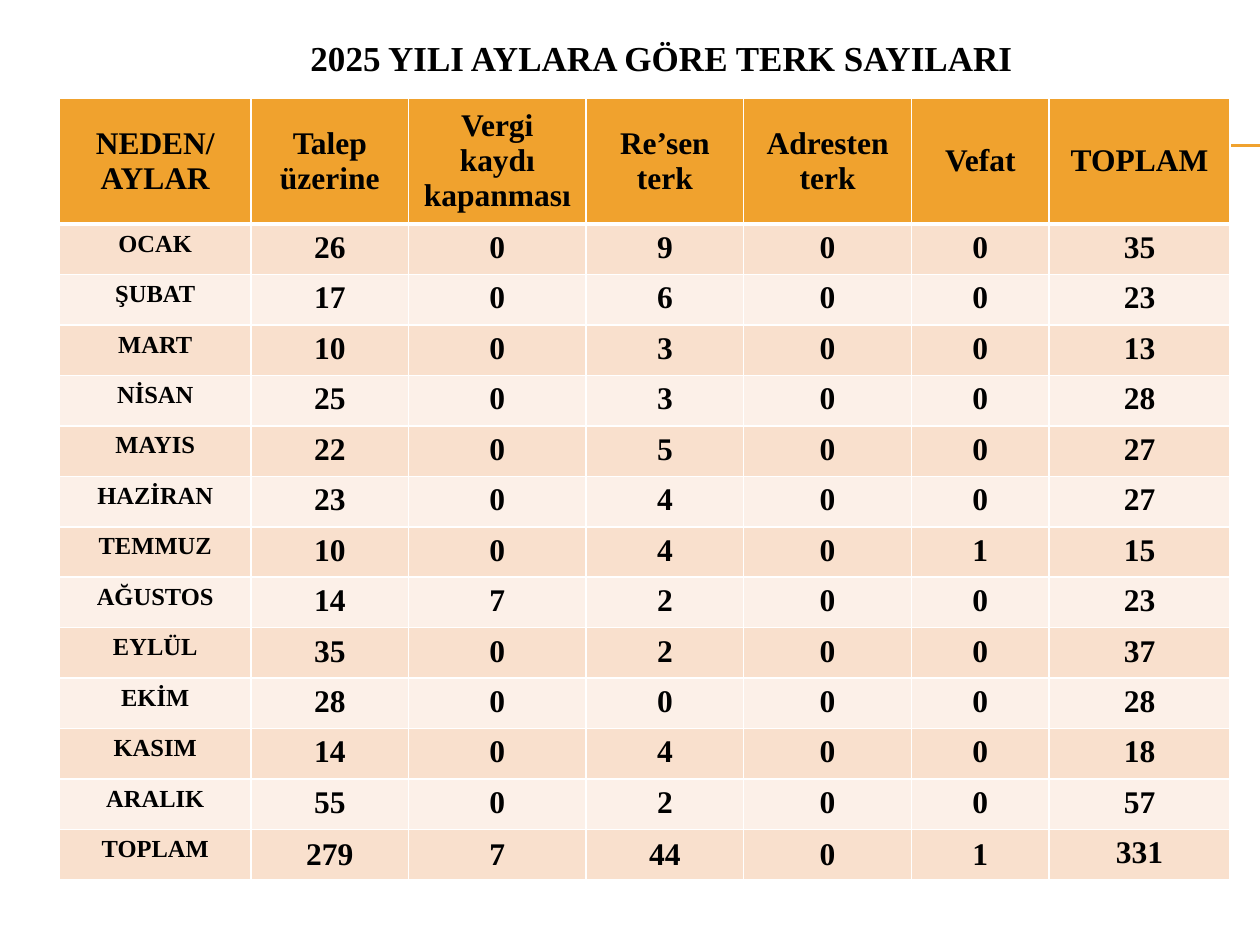
from lxml import etree
from pptx import Presentation
from pptx.dml.color import RGBColor
from pptx.enum import shapes, text
from pptx.oxml import ns
from pptx.util import Pt

ORANGE = RGBColor(0xF0, 0xA2, 0x2E)
PEACH = RGBColor(0xF9, 0xE0, 0xCD)
CREAM = RGBColor(0xFC, 0xF0, 0xE8)
BLACK = RGBColor(0, 0, 0)
WHITE = RGBColor(0xFF, 0xFF, 0xFF)
FONT = "Times New Roman"

TITLE = "2025 YILI AYLARA GÖRE TERK SAYILARI"
HEADER = ["NEDEN/ AYLAR", "Talep üzerine", "Vergi kaydı kapanması", "Re’sen terk",
          "Adresten terk", "Vefat", "TOPLAM"]
MONTHS = [
    ("OCAK", 26, 0, 9, 0, 0, 35),
    ("ŞUBAT", 17, 0, 6, 0, 0, 23),
    ("MART", 10, 0, 3, 0, 0, 13),
    ("NİSAN", 25, 0, 3, 0, 0, 28),
    ("MAYIS", 22, 0, 5, 0, 0, 27),
    ("HAZİRAN", 23, 0, 4, 0, 0, 27),
    ("TEMMUZ", 10, 0, 4, 0, 1, 15),
    ("AĞUSTOS", 14, 7, 2, 0, 0, 23),
    ("EYLÜL", 35, 0, 2, 0, 0, 37),
    ("EKİM", 28, 0, 0, 0, 0, 28),
    ("KASIM", 14, 0, 4, 0, 0, 18),
    ("ARALIK", 55, 0, 2, 0, 0, 57),
]
TOTALS = ("TOPLAM", 279, 7, 44, 0, 1, 331)
COL_WIDTHS = [109.5, 90, 101.5, 90, 96, 78.5, 103.5]
HEADER_HEIGHT, ROW_HEIGHT = 71, 28


def format_text(tf, size):
    for p in tf.paragraphs:
        p.alignment = text.PP_ALIGN.CENTER
        for r in p.runs:
            r.font.name = FONT
            r.font.size = Pt(size)
            r.font.bold = True
            r.font.color.rgb = BLACK


def set_borders(cell, widths):
    """Draw white borders; widths maps L, R, T and B to points."""
    tc_pr = cell._tc.get_or_add_tcPr()
    for i, side in enumerate("LRTB"):
        ln = etree.Element(ns.qn(f"a:ln{side}"), w=str(Pt(widths[side])))
        fill = etree.SubElement(ln, ns.qn("a:solidFill"))
        etree.SubElement(fill, ns.qn("a:srgbClr"), val=str(WHITE))
        tc_pr.insert(i, ln)


def add_rules(s, left, top, width):
    for y in (top, top + 0.7):
        line = s.shapes.add_connector(shapes.MSO_CONNECTOR.STRAIGHT,
                                      Pt(left), Pt(y), Pt(left + width), Pt(y))
        line.line.color.rgb = ORANGE
        line.line.width = Pt(0.75)
        etree.SubElement(line._element.spPr, ns.qn("a:effectLst"))


def add_title(s, left, top, width, height):
    tf = s.shapes.add_textbox(Pt(left), Pt(top), Pt(width), Pt(height)).text_frame
    tf.word_wrap = True
    tf.margin_top = Pt(6)
    tf.text = TITLE
    format_text(tf, 20)


def add_month_table(s, left, top):
    rows = [HEADER, *MONTHS, TOTALS]
    last_row, last_col = len(rows) - 1, len(HEADER) - 1
    height = HEADER_HEIGHT + last_row * ROW_HEIGHT
    table = s.shapes.add_table(len(rows), len(HEADER), Pt(left), Pt(top),
                               Pt(sum(COL_WIDTHS)), Pt(height)).table
    for col, width in zip(table.columns, COL_WIDTHS):
        col.width = Pt(width)
    for i, values in enumerate(rows):
        table.rows[i].height = Pt(ROW_HEIGHT if i else HEADER_HEIGHT)
        fill = ORANGE if i == 0 else PEACH if i % 2 else CREAM
        for j, value in enumerate(values):
            cell = table.cell(i, j)
            cell.text = str(value)
            format_text(cell.text_frame, 14 if i and j == 0 else 18)
            cell.fill.solid()
            cell.fill.fore_color.rgb = fill
            set_borders(cell, {"L": 1, "R": 1, "T": 3 if i == 1 else 1,
                               "B": 1 if i else 3})
            column_sum = i == last_row and 0 < j < last_col
            if i == 0 or column_sum:
                cell.vertical_anchor = text.MSO_ANCHOR.MIDDLE
            if column_sum:
                cell.margin_left = cell.margin_right = cell.margin_top = Pt(0.7)
                cell.margin_bottom = 0


def main():
    prs = Presentation()
    prs.slide_width, prs.slide_height = Pt(720), Pt(540)
    s = prs.slides.add_slide(prs.slide_layouts[6])
    add_rules(s, 40, 82.8, 680)
    add_title(s, 36, 15, 684, 41)
    add_month_table(s, 34, 56)
    prs.save("out.pptx")


if __name__ == "__main__":
    main()
